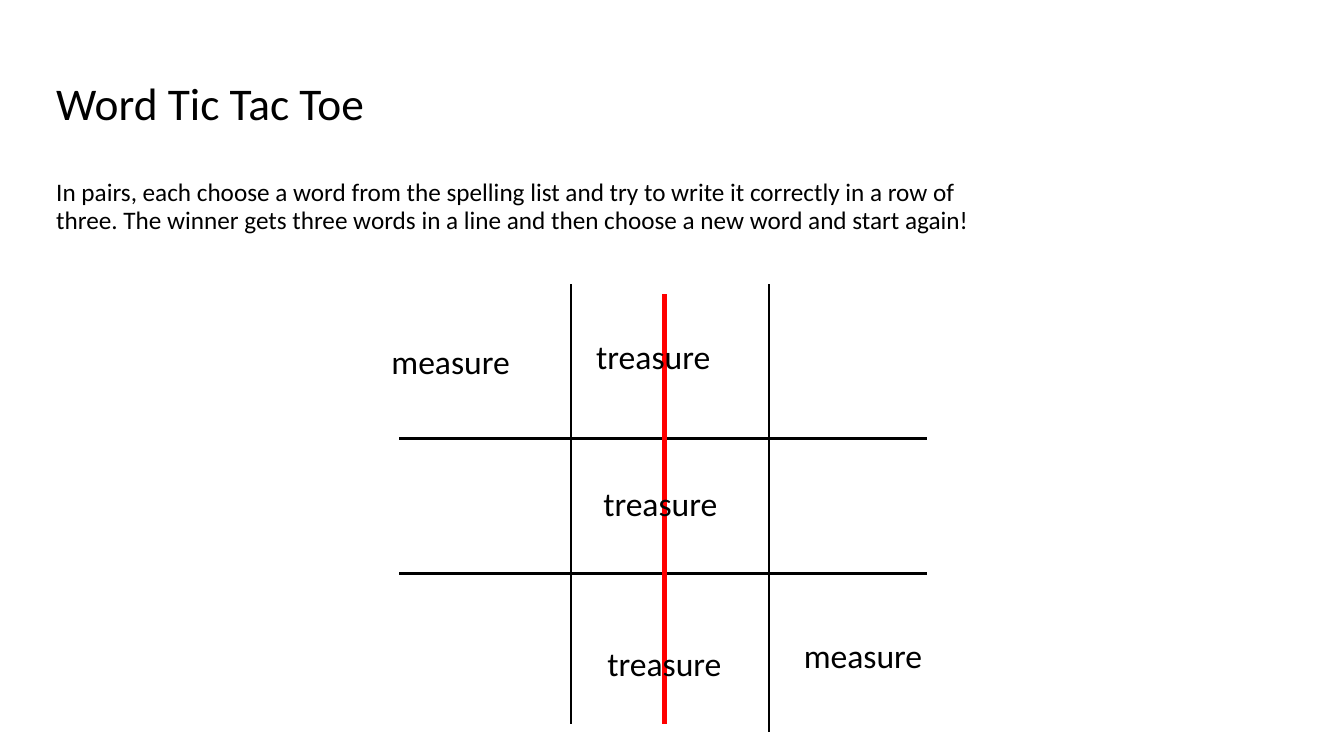
from lxml.etree import SubElement
from pptx import Presentation
from pptx.dml.color import RGBColor
from pptx.enum.shapes import MSO_CONNECTOR
from pptx.enum.text import MSO_ANCHOR, PP_ALIGN
from pptx.oxml.ns import qn
from pptx.util import Emu, Pt

FONT = "Calibri"
BLACK = "000000"
RED = "FF0000"


def px(size):
    """Turn px into EMU, at 100 px to the inch."""
    return Emu(size * 9144)


def color(code):
    return RGBColor.from_string(code)


def add_line(slide, start, end, ink=BLACK, width=1.5):
    line = slide.shapes.add_connector(
        MSO_CONNECTOR.STRAIGHT, *map(px, start + end))
    line.line.color.rgb = color(ink)
    line.line.width = Pt(width)
    SubElement(line._element.spPr, qn("a:effectLst"))


def add_text(slide, area, parts, align=PP_ALIGN.LEFT, anchor=MSO_ANCHOR.TOP,
             lines=1.0, gap=0, base=5):
    """Add a box with one paragraph for each (text, size) part."""
    frame = slide.shapes.add_textbox(*map(px, area)).text_frame
    frame.word_wrap = True
    frame.vertical_anchor = anchor
    frame.margin_bottom = px(base)
    for i, (text, size) in enumerate(parts):
        para = frame.add_paragraph() if i else frame.paragraphs[0]
        para.alignment = align
        para.line_spacing = lines
        if i:
            para.space_before = Pt(gap)
        run = para.add_run()
        run.text = text
        run.font.name = FONT
        run.font.size = Pt(size)
        run.font.color.rgb = color(BLACK)


def add_word(slide, word, left, top):
    add_text(slide, (left, top, 180, 50), [(word, 24)], align=PP_ALIGN.CENTER)


def main():
    deck = Presentation()
    deck.slide_width, deck.slide_height = px(1333), px(750)
    slide = deck.slides.add_slide(deck.slide_layouts[6])

    # Title and rules of the game
    rules = ("In pairs, each choose a word from the spelling list and try to "
             "write it correctly in a row of three. The winner gets three "
             "words in a line and then choose a new word and start again!")
    add_text(slide, (46, 127, 960, 108),
             [("Word Tic Tac Toe", 32.4), (rules, 18)],
             anchor=MSO_ANCHOR.MIDDLE, lines=0.9, gap=36, base=54)

    # Grid
    for x, end in ((566, 718), (763, 726)):
        add_line(slide, (x, 282), (x, end))
    for y in (435, 569):
        add_line(slide, (396, y), (919, y))

    # Winning line
    add_line(slide, (659, 292), (659, 718), ink=RED, width=3)

    # Words played
    for left, top in ((357, 333), (766, 625)):
        add_word(slide, "measure", left, top)
    for left, top in ((558, 328), (565, 474), (569, 633)):
        add_word(slide, "treasure", left, top)

    deck.save("out.pptx")


if __name__ == "__main__":
    main()
